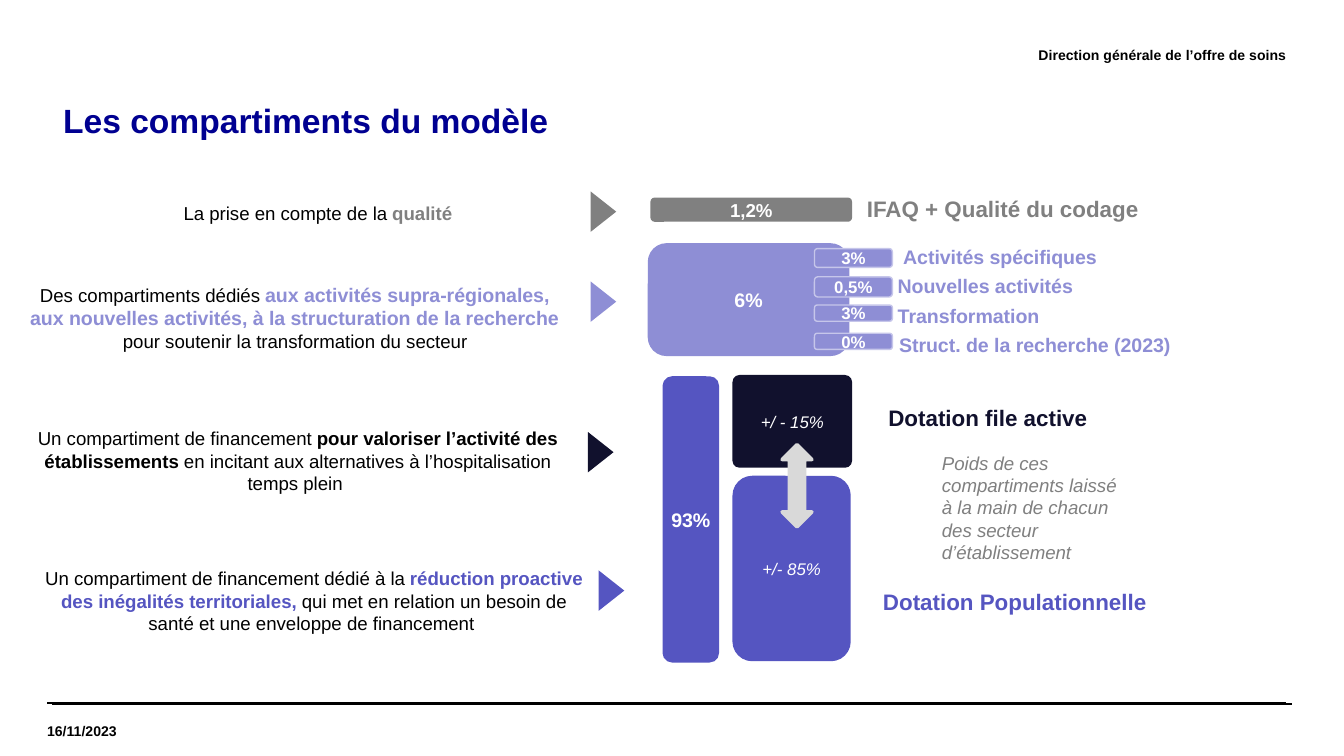
from lxml import etree
from pptx import Presentation
from pptx.dml.color import RGBColor
from pptx.enum import shapes, text
from pptx.oxml.ns import qn
from pptx.util import Inches, Pt

FONT = "Arial"
BLACK, WHITE, GREY, SILVER = "000000", "FFFFFF", "808080", "D9D9D9"
NAVY, BLUE, LILAC, PALE, TITLE = "11112D", "5555C1", "8E8ED5", "C6C6EA", "000091"
LEFT, CENTER, RIGHT = text.PP_ALIGN.LEFT, text.PP_ALIGN.CENTER, text.PP_ALIGN.RIGHT
TOP, MIDDLE = text.MSO_ANCHOR.TOP, text.MSO_ANCHOR.MIDDLE
ROUNDED = shapes.MSO_SHAPE.ROUNDED_RECTANGLE


def rgb(color):
    return RGBColor.from_string(color)


def inches(box):
    return [Inches(value) for value in box]


def format_font(font, size, color, bold=False, italic=False):
    font.name, font.size = FONT, Pt(size)
    font.bold, font.italic = bold, italic
    font.color.rgb = rgb(color)


def write(shape, runs, align=LEFT, anchor=TOP, margins=(0, 0)):
    """Fill a shape with one paragraph; each run is (words, size, color, bold, italic)."""
    frame = shape.text_frame
    frame.word_wrap = True
    frame.vertical_anchor = anchor
    frame.margin_left = frame.margin_right = Inches(margins[0])
    frame.margin_top = frame.margin_bottom = Inches(margins[1])
    paragraph = frame.paragraphs[0]
    paragraph.alignment = align
    for words, *style in runs:
        run = paragraph.add_run()
        run.text = words
        format_font(run.font, *style)


def add_text(slide, box, runs, **layout):
    write(slide.shapes.add_textbox(*inches(box)), runs, **layout)


def add_shape(slide, kind, box, fill, line=None, width=0.75):
    shape = slide.shapes.add_shape(kind, *inches(box))
    shape.shadow.inherit = False
    shape.fill.solid()
    shape.fill.fore_color.rgb = rgb(fill)
    if line:
        shape.line.color.rgb = rgb(line)
        shape.line.width = Pt(width)
    else:
        shape.line.fill.background()
    return shape


def add_bar(slide, box, fill, label, size, bold=True, line=None):
    shape = add_shape(slide, ROUNDED, box, fill, line)
    write(shape, [(label, size, WHITE, bold, not bold)], align=CENTER,
          anchor=MIDDLE, margins=(0.04, 0))
    return shape


def add_frame(slide, left, top, width):
    # Header, title, double rule and date
    add_text(slide, (left + 2.79, top, 6.43, 0.39),
             [("Direction générale de l’offre de soins", 7.5, BLACK, True)],
             align=RIGHT, anchor=MIDDLE)
    title = slide.shapes.title
    title.left, title.top, title.width, title.height = inches((left, top + 0.41, width, 0.59))
    write(title, [("Les compartiments du modèle", 18, TITLE, True)],
          anchor=MIDDLE, margins=(0.12, 0.05))
    title.text_frame.paragraphs[0].line_spacing = 0.9
    for shift, drop in ((0, 0), (0.04, 0.01)):
        x, y = left + shift, top + 5.02 + drop
        rule = slide.shapes.add_connector(shapes.MSO_CONNECTOR.STRAIGHT,
                                          *inches((x, y, x + width, y)))
        rule.line.color.rgb = rgb(BLACK)
        rule.line.width = Pt(0.8)
        etree.SubElement(rule.element.spPr, qn("a:effectLst"))
    add_text(slide, (left, top + 5.04, 1.32, 0.38),
             [("16/11/2023", 7.5, BLACK, True)], anchor=MIDDLE)


def add_explanation(slide, box, arrow, color, runs, anchor=MIDDLE):
    # Centred sentence with a triangle pointing right; arrow is relative to the box
    add_text(slide, box, runs, align=CENTER, anchor=anchor)
    triangle = add_shape(slide, shapes.MSO_SHAPE.ISOSCELES_TRIANGLE,
                         (box[0] + arrow[0], box[1] + arrow[1], 0.3, 0.19), color)
    triangle.rotation = 90


def add_explanations(slide, left, top):
    add_explanation(
        slide, (left + 0.17, top, 4.03, 0.17), (3.99, -0.02), GREY,
        [("La prise en compte de la ", 10, BLACK), ("qualité", 10, GREY, True)])
    add_explanation(
        slide, (left, top + 0.6, 4.03, 0.52), (4.16, 0.05), LILAC,
        [("Des compartiments dédiés ", 10, BLACK),
         ("aux activités supra-régionales, aux nouvelles activités, "
          "à la structuration de la recherche ", 10.5, LILAC, True),
         ("pour soutenir la transformation du secteur", 10, BLACK)])
    add_explanation(
        slide, (left + 0.02, top + 1.7, 4.03, 0.46), (4.12, 0.07), NAVY,
        [("Un compartiment de financement ", 10, BLACK),
         ("pour valoriser l’activité des établissements", 10, BLACK, True),
         (" en incitant aux alternatives à l’hospitalisation temps plein ", 10, BLACK)])
    add_explanation(
        slide, (left + 0.14, top + 2.72, 4.03, 0.5), (4.08, 0.08), BLUE,
        [("Un compartiment de financement dédié à la ", 10, BLACK),
         ("réduction proactive des inégalités territoriales, ", 10, BLUE, True),
         ("qui met en relation un besoin de santé et une enveloppe de financement ",
          10, BLACK)], anchor=TOP)


def add_quality(slide, left, top):
    add_bar(slide, (left, top, 1.5, 0.18), GREY, "1,2%", 10)
    add_text(slide, (left + 1.61, top - 0.02, 3.13, 0.2),
             [("IFAQ + Qualité du codage", 12, GREY, True)])


def add_specific_activities(slide, left, top):
    # Main block, then one small bar and label per activity
    add_bar(slide, (left, top, 1.5, 0.84), LILAC, "6%", 10.5)
    activities = [("3%", 0.14, "Activités spécifiques", 1.9, 2.22),
                  ("0,5%", 0.15, "Nouvelles activités", 1.86, 1.43),
                  ("3%", 0.12, "Transformation", 1.86, 1.27),
                  ("0%", 0.12, "Struct. de la recherche (2023)", 1.87, 2.04)]
    for index, (share, height, label, offset, width) in enumerate(activities):
        add_bar(slide, (left + 1.24, top + 0.04 + 0.21 * index, 0.58, height),
                LILAC, share, 9, line=PALE)
        add_text(slide, (left + offset, top + 0.01 + 0.22 * index, width, 0.18),
                 [(label, 10.5, LILAC, True)])


def add_main_allocations(slide, left, top):
    # Total share beside its two compartments
    add_bar(slide, (left, top + 0.01, 0.42, 2.13), BLUE, "93%", 10.5)
    active = add_bar(slide, (left + 0.52, top, 0.89, 0.69), NAVY, "+/ - 15%", 9, bold=False)
    active.adjustments[0] = 0.077
    add_bar(slide, (left + 0.52, top + 0.75, 0.88, 1.38), BLUE, "+/- 85%", 9, bold=False)
    add_shape(slide, shapes.MSO_SHAPE.UP_DOWN_ARROW,
              (left + 0.89, top + 0.52, 0.22, 0.61), SILVER, SILVER, 2)
    # Labels
    add_text(slide, (left + 1.68, top + 0.21, 1.88, 0.22),
             [("Dotation file active", 12, NAVY, True)], anchor=MIDDLE)
    add_text(slide, (left + 1.98, top + 0.52, 1.55, 0.94),
             [("Poids de ces compartiments laissé à la main de chacun "
               "des secteur d’établissement", 10, GREY, False, True)], margins=(0.1, 0.05))
    add_text(slide, (left + 1.64, top + 1.59, 3.57, 0.2),
             [("Dotation Populationnelle", 12, BLUE, True)])


def main():
    presentation = Presentation()
    # Widescreen, 16:9
    presentation.slide_width = Inches(10)
    presentation.slide_height = Inches(10) * 9 // 16
    slide = presentation.slides.add_slide(presentation.slide_layouts[5])
    add_frame(slide, 0.35, 0.21, 9.22)
    add_explanations(slide, 0.18, 1.5)
    add_quality(slide, 4.84, 1.47)
    add_specific_activities(slide, 4.82, 1.81)
    add_main_allocations(slide, 4.93, 2.79)
    presentation.save("out.pptx")


if __name__ == "__main__":
    main()
